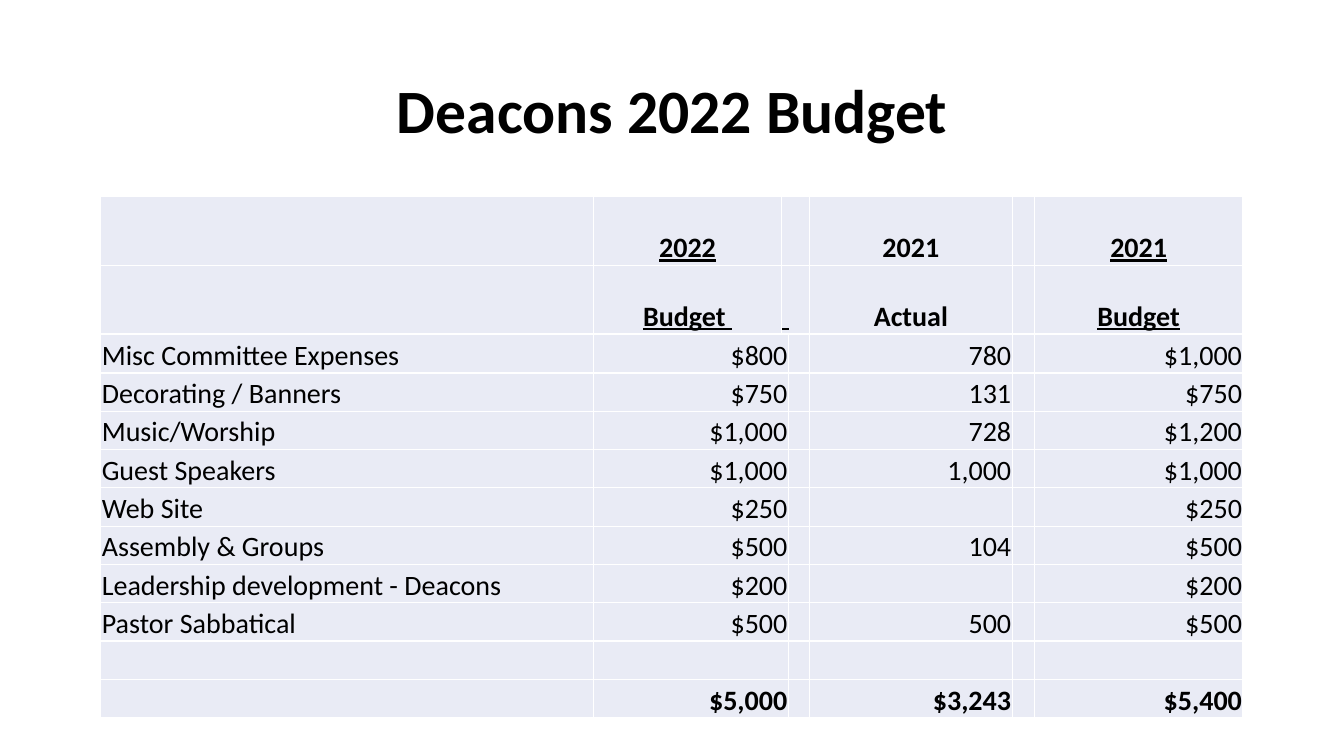
from lxml import etree
from pptx import Presentation
from pptx.dml.color import RGBColor
from pptx.enum.text import MSO_ANCHOR, PP_ALIGN
from pptx.oxml.ns import qn
from pptx.util import Inches, Pt

LEFT, CENTER, RIGHT = PP_ALIGN.LEFT, PP_ALIGN.CENTER, PP_ALIGN.RIGHT
MIDDLE, BOTTOM = MSO_ANCHOR.MIDDLE, MSO_ANCHOR.BOTTOM
BLACK = RGBColor(0x00, 0x00, 0x00)
WHITE = RGBColor(0xFF, 0xFF, 0xFF)
CELL_FILL = RGBColor(0xE9, 0xEB, 0xF5)

HEADER_WIDTHS = [4.89, 1.86, 0.28, 2.01, 0.22, 2.07]
BUDGET_WIDTHS = [4.89, 1.93, 0.21, 2.01, 0.22, 2.07]
HEADER_ROWS = [
    ["", "2022", "", "2021", "", "2021"],
    ["", "Budget ", " ", "Actual", "", "Budget"],
]
BUDGET_ITEMS = [
    ("Misc Committee Expenses", "$800", "780", "$1,000"),
    ("Decorating / Banners", "$750", "131", "$750"),
    ("Music/Worship", "$1,000", "728", "$1,200"),
    ("Guest Speakers", "$1,000", "1,000", "$1,000"),
    ("Web Site", "$250", "", "$250"),
    ("Assembly & Groups", "$500", "104", "$500"),
    ("Leadership development - Deacons", "$200", "", "$200"),
    ("Pastor Sabbatical", "$500", "500", "$500"),
    ("", "", "", ""),
    ("", "$5,000", "$3,243", "$5,400"),
]
ACTUAL_COLUMN = 3


def write_text(frame, text, size=20, bold=False, underline=False, align=LEFT, spacing=1.0):
    paragraph = frame.paragraphs[0]
    paragraph.alignment = align
    paragraph.line_spacing = spacing
    run = paragraph.add_run()
    run.text = text
    run.font.name = "Calibri"
    run.font.size = Pt(size)
    run.font.bold = bold
    run.font.underline = underline
    run.font.color.rgb = BLACK


class BudgetSlide:
    """Draws the title and the tables of a budget slide in one style."""

    def __init__(self, presentation):
        self.slide = presentation.slides.add_slide(presentation.slide_layouts[6])
        self.border_color = WHITE
        self.border_width = Pt(1)
        self.cell_fill = CELL_FILL

    def title(self, text, left, top, width, height):
        shape = self.slide.shapes.add_textbox(
            Inches(left), Inches(top), Inches(width), Inches(height))
        frame = shape.text_frame
        frame.word_wrap = True
        frame.vertical_anchor = MIDDLE
        write_text(frame, text, size=44, bold=True, align=CENTER, spacing=0.9)

    def style_cell(self, cell):
        cell.margin_left = cell.margin_right = cell.margin_top = Inches(0.01)
        cell.margin_bottom = 0
        cell.vertical_anchor = BOTTOM
        properties = cell._tc.get_or_add_tcPr()
        for side in ("a:lnL", "a:lnR", "a:lnT", "a:lnB"):
            line = etree.SubElement(properties, qn(side), w=str(self.border_width))
            fill = etree.SubElement(line, qn("a:solidFill"))
            etree.SubElement(fill, qn("a:srgbClr"), val=str(self.border_color))
        cell.fill.solid()
        cell.fill.fore_color.rgb = self.cell_fill

    def table(self, rows, widths, left, top, row_height, text_format):
        shape = self.slide.shapes.add_table(
            len(rows), len(widths), Inches(left), Inches(top),
            Inches(sum(widths)), Inches(row_height * len(rows)))
        table = shape.table
        table.first_row = table.horz_banding = False
        for column, width in zip(table.columns, widths):
            column.width = Inches(width)
        for row_index, texts in enumerate(rows):
            table.rows[row_index].height = Inches(row_height)
            for column_index, text in enumerate(texts):
                cell = table.cell(row_index, column_index)
                self.style_cell(cell)
                if text:
                    write_text(cell.text_frame, text, **text_format(row_index, column_index))


def header_format(row, column):
    return {"bold": True, "underline": column != ACTUAL_COLUMN,
            "align": LEFT if column == 2 else CENTER}


def budget_format(row, column):
    return {"bold": row == len(BUDGET_ITEMS) - 1, "align": RIGHT if column else LEFT}


def main():
    presentation = Presentation()
    presentation.slide_width = Inches(13.33)
    presentation.slide_height = Inches(7.5)
    budget = BudgetSlide(presentation)
    budget.title("Deacons 2022 Budget", 0.92, 0.4, 11.5, 1.45)
    budget_rows = [[item, planned, "", actual, "", previous]
                   for item, planned, actual, previous in BUDGET_ITEMS]
    budget.table(budget_rows, BUDGET_WIDTHS, 1, 3.32, 0.38, budget_format)
    budget.table(HEADER_ROWS, HEADER_WIDTHS, 1, 1.95, 0.68, header_format)
    presentation.save("out.pptx")


if __name__ == "__main__":
    main()
